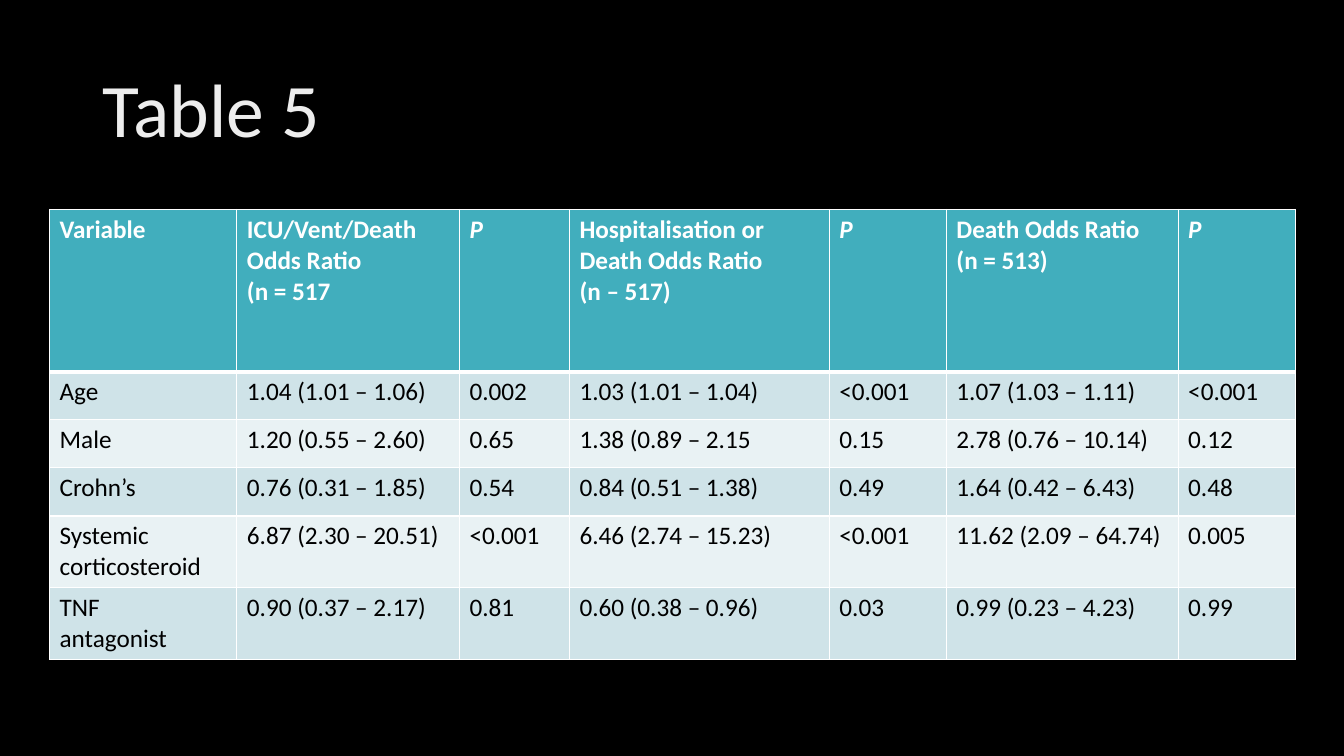
from copy import deepcopy

from lxml import etree
from pptx import Presentation
from pptx import util as u
from pptx.dml.color import RGBColor
from pptx.enum import text
from pptx.oxml.ns import qn

FONT = "Calibri"
COLUMN_WIDTHS = [4.72, 5.61, 2.77, 6.55, 2.95, 5.84, 2.95]
HEADER_HEIGHT, ROW_HEIGHT = 4.09, 1.21
TITLE_STOPS = [(0, "BFBFBF"), (0.28, "EDEDED"), (1, "FFFFFF")]
HEADER_FILL, BAND_FILLS = "41AEBD", ["CFE3E8", "E9F2F4"]

ODDS_RATIOS = [
    ["Variable", "ICU/Vent/Death Odds Ratio\n(n = 517", "P",
     "Hospitalisation or Death Odds Ratio\n(n – 517)", "P",
     "Death Odds Ratio\n(n = 513)", "P"],
    ["Age", "1.04 (1.01 – 1.06)", "0.002", "1.03 (1.01 – 1.04)", "<0.001",
     "1.07 (1.03 – 1.11)", "<0.001"],
    ["Male", "1.20 (0.55 – 2.60)", "0.65", "1.38 (0.89 – 2.15", "0.15",
     "2.78 (0.76 – 10.14)", "0.12"],
    ["Crohn’s", "0.76 (0.31 – 1.85)", "0.54", "0.84 (0.51 – 1.38)", "0.49",
     "1.64 (0.42 – 6.43)", "0.48"],
    ["Systemic\ncorticosteroid", "6.87 (2.30 – 20.51)", "<0.001",
     "6.46 (2.74 – 15.23)", "<0.001", "11.62 (2.09 – 64.74)", "0.005"],
    ["TNF\nantagonist", "0.90 (0.37 – 2.17)", "0.81", "0.60 (0.38 – 0.96)", "0.03",
     "0.99 (0.23 – 4.23)", "0.99"],
]


def rgb(hex_colour):
    return RGBColor.from_string(hex_colour)


def fill_gradient(font, stops, clockwise_angle):
    font.fill.gradient()
    font.fill.gradient_angle = 360 - clockwise_angle
    stop_list = next(font.fill.gradient_stops._gsLst.iter(qn("a:gsLst")))
    while len(stop_list) < len(stops):
        stop_list.append(deepcopy(stop_list[0]))
    for stop, (position, colour) in zip(font.fill.gradient_stops, stops):
        stop.position = position
        stop.color.rgb = rgb(colour)


def place_title(slide, wording, left, top, width, height):
    title = slide.shapes.title
    title.left, title.top = u.Cm(left), u.Cm(top)
    title.width, title.height = u.Cm(width), u.Cm(height)
    frame = title.text_frame
    frame.auto_size = text.MSO_AUTO_SIZE.NONE
    frame.vertical_anchor = text.MSO_ANCHOR.MIDDLE
    paragraph = frame.paragraphs[0]
    paragraph.alignment = text.PP_ALIGN.LEFT
    paragraph.line_spacing = 0.9
    run = paragraph.add_run()
    run.text = wording
    run.font.size = u.Pt(54)
    run.font.name = FONT
    fill_gradient(run.font, TITLE_STOPS, 80)


def set_borders(cell, top, bottom):
    """Draw white borders; top and bottom are widths in points."""
    properties = cell._tc.get_or_add_tcPr()
    for side, points in (("L", 1), ("R", 1), ("T", top), ("B", bottom)):
        line = etree.SubElement(properties, qn(f"a:ln{side}"), w=str(u.Pt(points)))
        fill = etree.SubElement(line, qn("a:solidFill"))
        etree.SubElement(fill, qn("a:srgbClr"), val="FFFFFF")


def write_cell(cell, wording, is_header):
    frame = cell.text_frame
    for index, line in enumerate(wording.split("\n")):
        paragraph = frame.add_paragraph() if index else frame.paragraphs[0]
        run = paragraph.add_run()
        run.text = line
        run.font.size = u.Pt(18)
        run.font.name = FONT
        run.font.bold = is_header
        run.font.italic = wording == "P"
        run.font.color.rgb = rgb("FFFFFF" if is_header else "000000")


def place_odds_table(slide, rows, left, top):
    heights = [HEADER_HEIGHT] + [ROW_HEIGHT] * (len(rows) - 1)
    table = slide.shapes.add_table(
        len(rows), len(COLUMN_WIDTHS), u.Cm(left), u.Cm(top),
        u.Cm(sum(COLUMN_WIDTHS)), u.Cm(sum(heights))).table
    for column, width in zip(table.columns, COLUMN_WIDTHS):
        column.width = u.Cm(width)
    for row_index, row in enumerate(rows):
        table.rows[row_index].height = u.Cm(heights[row_index])
        is_header = row_index == 0
        fill = HEADER_FILL if is_header else BAND_FILLS[(row_index - 1) % 2]
        for column_index, wording in enumerate(row):
            cell = table.cell(row_index, column_index)
            set_borders(cell, top=3 if row_index == 1 else 1, bottom=3 if is_header else 1)
            cell.fill.solid()
            cell.fill.fore_color.rgb = rgb(fill)
            write_cell(cell, wording, is_header)


def main():
    deck = Presentation()
    deck.slide_width, deck.slide_height = u.Cm(33.87), u.Cm(19.05)
    slide = deck.slides.add_slide(deck.slide_layouts[5])
    slide.background.fill.solid()
    slide.background.fill.fore_color.rgb = rgb("000000")
    place_title(slide, "Table 5", 2.33, 1.01, 29.21, 3.68)
    place_odds_table(slide, ODDS_RATIOS, 1.25, 5.28)
    deck.save("out.pptx")


if __name__ == "__main__":
    main()
